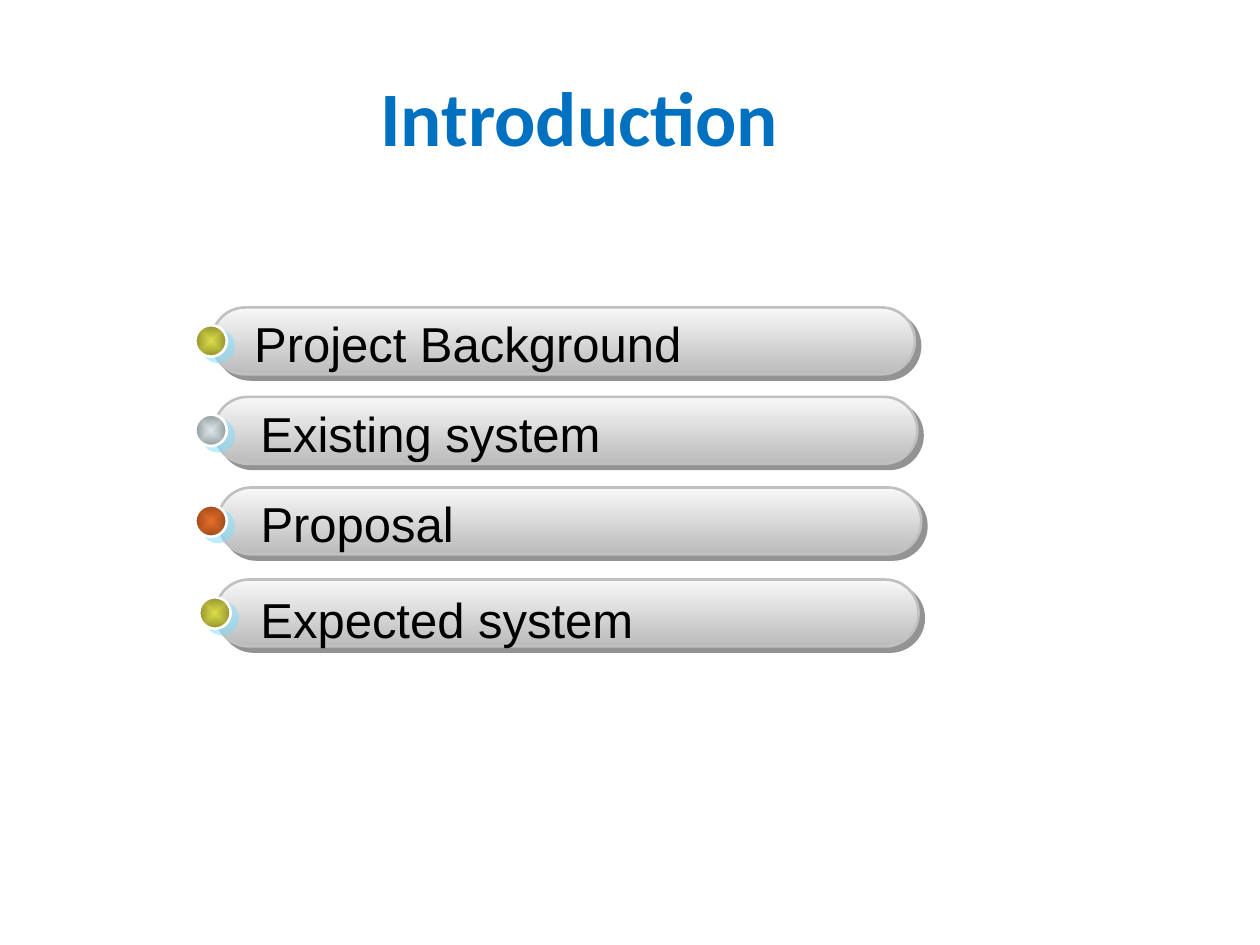
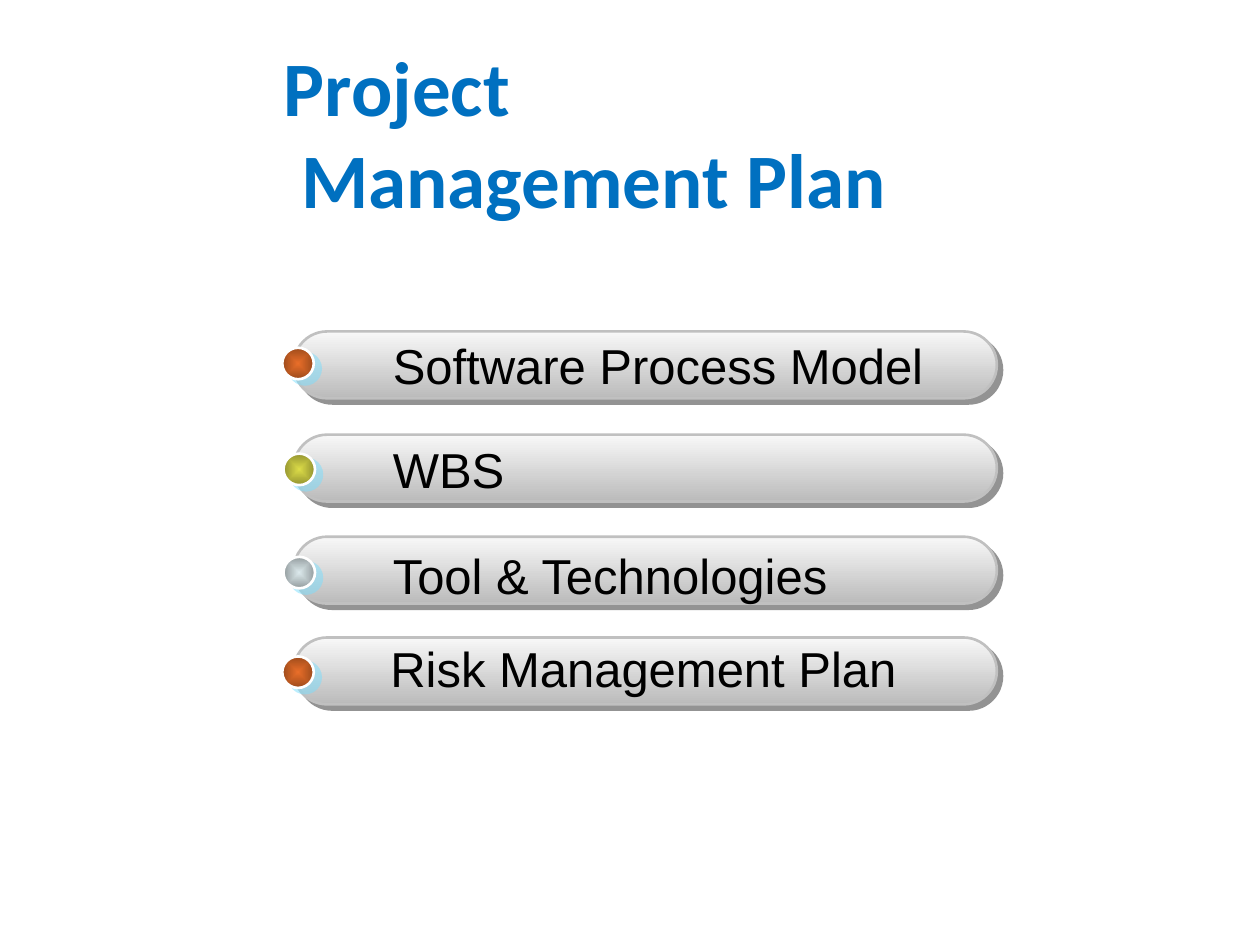
import pptx
import pptx.util
import pptx.dml.color
import pptx.enum.shapes
import pptx.enum.text
from lxml import etree

Pt = pptx.util.Pt
RGBColor = pptx.dml.color.RGBColor
SHAPE = pptx.enum.shapes.MSO_SHAPE
ALIGN = pptx.enum.text.PP_ALIGN
NS = "http://schemas.openxmlformats.org/drawingml/2006/main"

# Colours
TITLE_BLUE = RGBColor(0x00, 0x70, 0xC0)
BLACK = RGBColor(0x00, 0x00, 0x00)
WHITE = RGBColor(0xFF, 0xFF, 0xFF)
BAR_LINE = RGBColor(0xC0, 0xC0, 0xC0)
BAR_SHADOW = RGBColor(0x29, 0x29, 0x29)
BALL_SHADOW = RGBColor(0x7B, 0xDE, 0xFD)
BAR_FILL = (RGBColor(0xF8, 0xF8, 0xF8), RGBColor(0xBB, 0xBB, 0xBB))
OLIVE = (RGBColor(0xDC, 0xDC, 0x48), RGBColor(0x93, 0x93, 0x30))
SILVER = (RGBColor(0xDC, 0xE9, 0xEC), RGBColor(0x93, 0x9C, 0x9E))
ORANGE = (RGBColor(0xE9, 0x6E, 0x29), RGBColor(0x9C, 0x4A, 0x1B))

# Shared sizes and fonts
BAR_W, BAR_H, BALL, TEXT_H = 401.8, 38.2, 18, 41
TITLE_W, TITLE_H = 648, 90
TITLE_FONT = {"name": "Calibri", "size": Pt(44), "bold": True}
ITEM_FONT = {"name": "Arial", "size": Pt(28), "bold": False}


def add_gradient_shape(s, kind, box, colors, line, shadow, distance, angle):
    sp = s.shapes.add_shape(kind, *(Pt(v) for v in box))
    sp.fill.gradient()
    sp.fill.gradient_angle = 270
    for stop, color in zip(sp.fill.gradient_stops, colors):
        stop.color.rgb = color
    sp.line.color.rgb = line
    sp.line.width = Pt(1.5)
    sp.shadow.inherit = False
    effects = sp._element.spPr.find(f"{{{NS}}}effectLst")
    effects.append(etree.fromstring(
        f'<a:outerShdw xmlns:a="{NS}" dist="{Pt(distance)}" dir="{angle * 60000}" '
        f'algn="ctr" rotWithShape="0"><a:srgbClr val="{shadow}">'
        '<a:alpha val="50000"/></a:srgbClr></a:outerShdw>'))
    return sp


def format_text(p, font, color):
    for name, value in font.items():
        setattr(p.font, name, value)
    p.font.color.rgb = color


# Each title line: text, left indent
# Each item: text, (bar left, top), (text left, top, width), (ball left, top), ball colours
slides = [
    {"title": [("Introduction", 0)], "at": (7.2, 20.9),
     "title_align": ALIGN.CENTER, "align": ALIGN.JUSTIFY, "wrap": True,
     "items": [
         ("Project Background", (121, 175.7), (138.2, 175.7, 360), (111.6, 185.8), OLIVE),
         ("Existing system", (122.4, 226.8), (141.8, 226.8, 234.7), (111.6, 236.9), SILVER),
         ("Proposal", (124.6, 278.6), (141.8, 278.6, 281.5), (111.6, 288.7), ORANGE),
         ("Expected system", (123.1, 331.2), (141.8, 333.4, 235.4), (113.8, 341.3), OLIVE)]},
    {"title": [("Project", 137), ("Management Plan", 147)], "at": (18, 30.2),
     "title_align": ALIGN.LEFT, "align": ALIGN.LEFT, "wrap": False,
     "items": [
         ("Software Process Model", (167.8, 189.4), (217.4, 187.9, 321.1), (161.3, 198.7), ORANGE),
         ("WBS", (167.8, 248.4), (217.4, 247.7, 78.5), (162, 259.2), OLIVE),
         ("Tool & Technologies", (167.8, 306.7), (217.4, 308.2, 265.7), (162, 318.2), SILVER),
         ("Risk Management Plan", (167.8, 364.3), (216, 361.4, 307.4), (161.3, 375.1), ORANGE)]},
]

prs = pptx.Presentation()
prs.slide_width, prs.slide_height = Pt(720), Pt(540)

for content in slides:
    s = prs.slides.add_slide(prs.slide_layouts[5])

    # Title
    title = s.shapes.title
    title.left, title.top = (Pt(v) for v in content["at"])
    title.width, title.height = Pt(TITLE_W), Pt(TITLE_H)
    tf = title.text_frame
    tf.auto_size = pptx.enum.text.MSO_AUTO_SIZE.NONE
    tf.vertical_anchor = pptx.enum.text.MSO_ANCHOR.MIDDLE
    tf.text = "\n".join(text for text, indent in content["title"])
    for p, (text, indent) in zip(tf.paragraphs, content["title"]):
        p.alignment = content["title_align"]
        p._p.get_or_add_pPr().set("marL", str(Pt(indent)))
        format_text(p, TITLE_FONT, TITLE_BLUE)

    for text, bar_at, (left, top, width), ball_at, ball_colors in content["items"]:
        # Bar
        bar = add_gradient_shape(s, SHAPE.ROUNDED_RECTANGLE, (*bar_at, BAR_W, BAR_H),
                                 BAR_FILL, BAR_LINE, BAR_SHADOW, 4.2, 45)
        bar.adjustments[0] = 0.5

        # Item text
        tb = s.shapes.add_textbox(Pt(left), Pt(top), Pt(width), Pt(TEXT_H))
        tf = tb.text_frame
        tf.word_wrap = content["wrap"]
        tf.auto_size = pptx.enum.text.MSO_AUTO_SIZE.SHAPE_TO_FIT_TEXT
        p = tf.paragraphs[0]
        p.text = text
        p.alignment = content["align"]
        format_text(p, ITEM_FONT, BLACK)

        # Ball, shaded from its centre
        ball = add_gradient_shape(s, SHAPE.OVAL, (*ball_at, BALL, BALL),
                                  ball_colors, WHITE, BALL_SHADOW, 5, 37)
        lin = ball._element.spPr.find(f".//{{{NS}}}lin")
        lin.getparent().replace(lin, etree.fromstring(
            f'<a:path xmlns:a="{NS}" path="shape">'
            '<a:fillToRect l="50000" t="50000" r="50000" b="50000"/></a:path>'))

prs.save("out.pptx")
